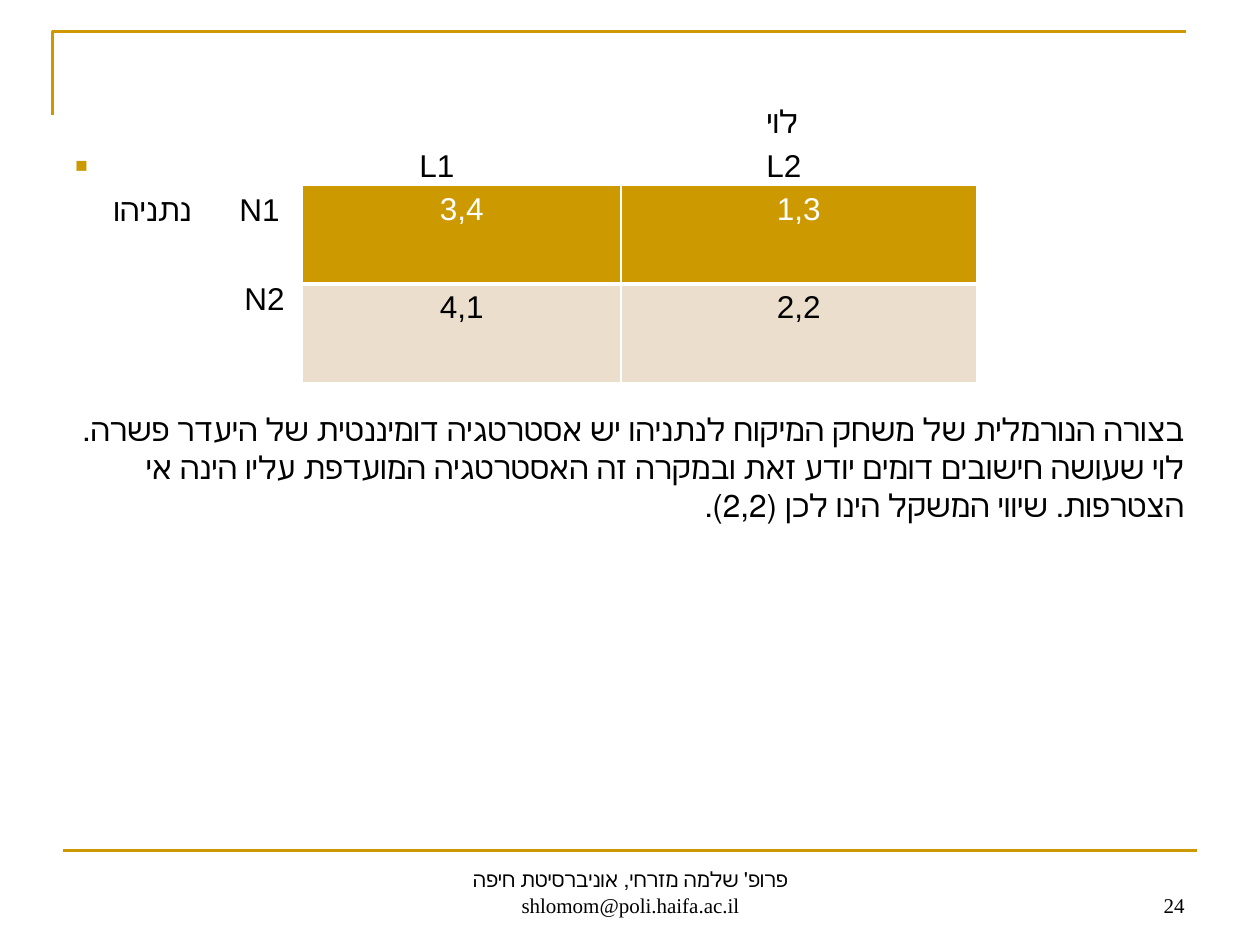
"""Build the payoff matrix slide of the bargaining game in normal form."""
from dataclasses import dataclass

import lxml.etree
import pptx
import pptx.dml.color
import pptx.enum.shapes
import pptx.enum.text
import pptx.oxml.ns
import pptx.util

Pt = pptx.util.Pt
Align = pptx.enum.text.PP_ALIGN
Anchor = pptx.enum.text.MSO_ANCHOR
qn = pptx.oxml.ns.qn


@dataclass(frozen=True)
class Theme:
    """Colours, fonts and type sizes of the deck."""
    accent: str = "CC9900"
    pale: str = "ECDECC"
    ink: str = "000000"
    paper: str = "FFFFFF"
    body_font: str = "Arial"
    footer_font: str = "Times New Roman"
    body_size: float = 18
    footer_size: float = 12
    rule: float = 1.5


@dataclass(frozen=True)
class Area:
    """Rectangle in points."""
    left: float
    top: float
    width: float
    height: float

    def lengths(self) -> tuple:
        """Return the four lengths for a python-pptx call."""
        return Pt(self.left), Pt(self.top), Pt(self.width), Pt(self.height)


@dataclass(frozen=True)
class Line:
    """One paragraph of the body."""
    text: str
    tabs: tuple = ()
    before: float = 3.6
    bullet: bool = False
    rtl: bool = False


@dataclass(frozen=True)
class Footer:
    """One box at the foot of the page."""
    area: Area
    text: str
    align: Align


THEME = Theme()
BODY = Area(36, 54.72, 648, 428.4)
MATRIX = Area(172.8, 105.84, 385.2, 113.04)
COLUMNS = (182.16, 203.04)
PAYOFFS = (("3,4", "1,3"), ("4,1", "2,2"))
ROW_STYLES = ((THEME.accent, THEME.paper, 3), (THEME.pale, THEME.ink, 1))
LINES = (
    Line("\tלוי", (394.8,)),
    Line("\tL1\tL2", (196.6, 394.8), bullet=True),
    Line("\tנתניהו\tN1", (21.7, 93.7)),
    Line("\tN2", (96.6,), before=29),
    Line("בצורה הנורמלית של משחק המיקוח לנתניהו יש אסטרטגיה דומיננטית של היעדר פשרה. "
         "לוי שעושה חישובים דומים יודע זאת ובמקרה זה האסטרטגיה המועדפת עליו הינה אי "
         "הצטרפות. שיווי המשקל הינו לכן (2,2).", before=53.7, rtl=True),
)
FOOTERS = (
    Footer(Area(516.24, 491.76, 167.76, 36), "24", Align.RIGHT),
    Footer(Area(246.24, 491.76, 228.24, 36),
           "פרופ' שלמה מזרחי, אוניברסיטת חיפה shlomom@poli.haifa.ac.il", Align.CENTER),
)


def rgb(value: str) -> pptx.dml.color.RGBColor:
    """Turn a hex string into a colour."""
    return pptx.dml.color.RGBColor.from_string(value)


def add_child(parent, tag: str, **attributes: str):
    """Append a DrawingML element and return it."""
    return lxml.etree.SubElement(parent, qn(tag), attributes)


def style_para(para, font: str, size: float, color: str) -> None:
    """Format every run of a paragraph."""
    for span in para.runs:
        span.font.name = font
        span.font.size = Pt(size)
        span.font.color.rgb = rgb(color)


def style_rule(shape) -> None:
    """Give a shape the accent line."""
    shape.line.color.rgb = rgb(THEME.accent)
    shape.line.width = Pt(THEME.rule)


def add_rules(page) -> None:
    """Draw the corner frame and the footer rule."""
    builder = page.shapes.build_freeform(30.24, 66.24, scale=Pt(1))
    builder.add_line_segments([(30.24, 18), (678.24, 18)], close=False)
    corner = builder.convert_to_shape()
    corner.shadow.inherit = False
    corner.fill.background()
    style_rule(corner)
    rule = page.shapes.add_connector(
        pptx.enum.shapes.MSO_CONNECTOR.STRAIGHT, Pt(36), Pt(486), Pt(684), Pt(486))
    style_rule(rule)
    add_child(rule.element.spPr, "a:effectLst")


def fill_line(para, line: Line) -> None:
    """Write one body paragraph with its bullet, tabs and direction."""
    para.text = line.text
    para.alignment = Align.RIGHT if line.rtl else Align.LEFT
    para.space_before = Pt(line.before)
    style_para(para, THEME.body_font, THEME.body_size, THEME.ink)
    properties = para._p.get_or_add_pPr()
    properties.set("rtl", str(int(line.rtl)))
    if line.bullet:
        color = add_child(properties, "a:buClr")
        add_child(color, "a:srgbClr", val=THEME.accent)
        add_child(properties, "a:buSzPct", val="65000")
        add_child(properties, "a:buFont", typeface=THEME.body_font)
        add_child(properties, "a:buChar", char="■")
    if line.tabs:
        stops = add_child(properties, "a:tabLst")
        for stop in line.tabs:
            add_child(stops, "a:tab", pos=str(Pt(stop)), algn="l")


def add_body(page) -> None:
    """Write the matrix labels and the conclusion."""
    frame = page.shapes.add_textbox(*BODY.lengths()).text_frame
    frame.word_wrap = True
    for index, line in enumerate(LINES):
        fill_line(frame.add_paragraph() if index else frame.paragraphs[0], line)


def add_borders(cell, bottom: float) -> None:
    """Put white borders around a cell."""
    properties = cell._tc.get_or_add_tcPr()
    widths = {"a:lnL": 1, "a:lnR": 1, "a:lnT": 1, "a:lnB": bottom}
    for index, (tag, width) in enumerate(widths.items()):
        border = add_child(properties, tag, w=str(Pt(width)))
        add_child(add_child(border, "a:solidFill"), "a:srgbClr", val=THEME.paper)
        properties.insert(index, border)


def add_matrix(page) -> None:
    """Draw the payoff table."""
    table = page.shapes.add_table(len(PAYOFFS), len(COLUMNS), *MATRIX.lengths()).table
    for column, width in zip(table.columns, COLUMNS):
        column.width = Pt(width)
    for row, payoffs, (fill, ink, bottom) in zip(table.rows, PAYOFFS, ROW_STYLES):
        for cell, payoff in zip(row.cells, payoffs):
            cell.text_frame.text = payoff
            para = cell.text_frame.paragraphs[0]
            para.alignment = Align.CENTER
            style_para(para, THEME.body_font, THEME.body_size, ink)
            cell.fill.solid()
            cell.fill.fore_color.rgb = rgb(fill)
            add_borders(cell, bottom)


def add_footer(page, footer: Footer) -> None:
    """Write one footer box."""
    frame = page.shapes.add_textbox(*footer.area.lengths()).text_frame
    frame.word_wrap = True
    frame.vertical_anchor = Anchor.BOTTOM
    frame.text = footer.text
    para = frame.paragraphs[0]
    para.alignment = footer.align
    style_para(para, THEME.footer_font, THEME.footer_size, THEME.ink)


def main() -> None:
    """Build and save the deck."""
    deck = pptx.Presentation()
    deck.slide_width, deck.slide_height = Pt(720), Pt(540)
    page = deck.slides.add_slide(deck.slide_layouts.get_by_name("Blank"))
    add_rules(page)
    add_body(page)
    add_matrix(page)
    for footer in FOOTERS:
        add_footer(page, footer)
    deck.save("out.pptx")


if __name__ == "__main__":
    main()
